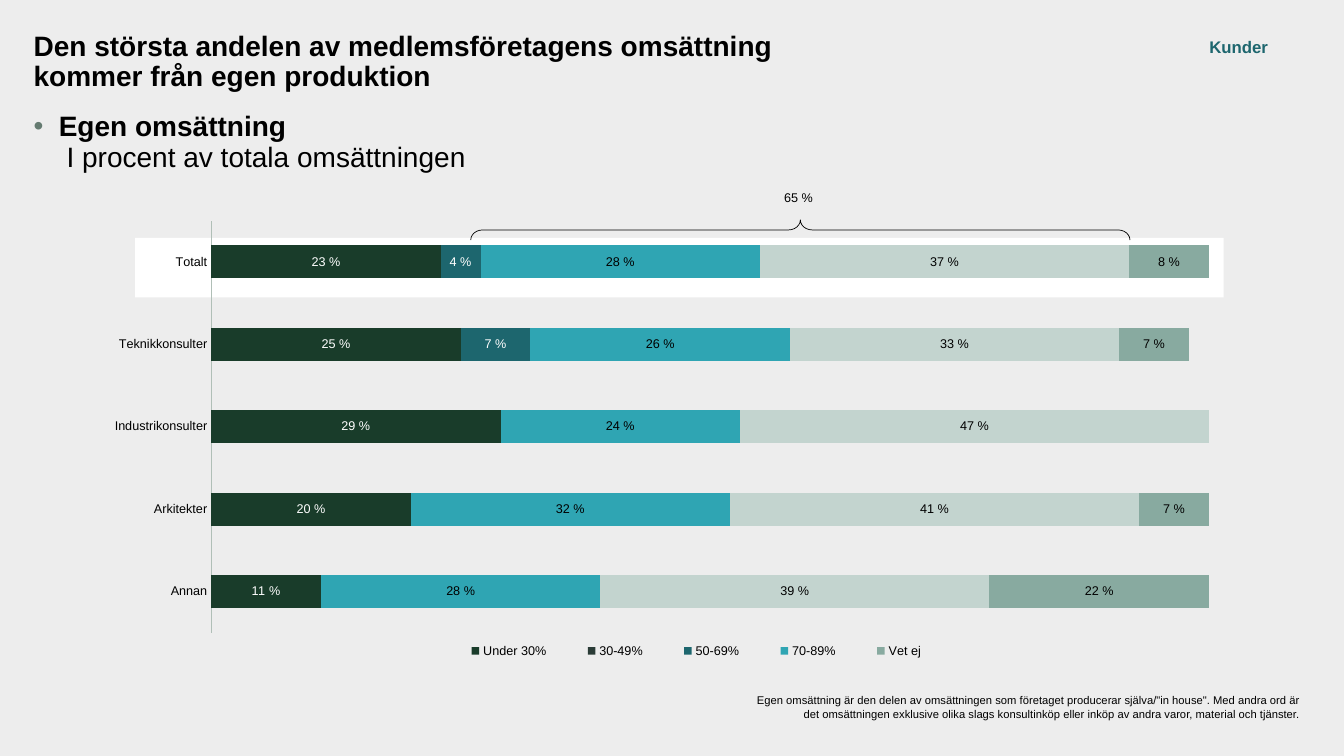
from dataclasses import dataclass
from lxml import etree
from pptx import Presentation
from pptx.chart.data import CategoryChartData
from pptx.dml.color import RGBColor
from pptx.enum.chart import XL_CHART_TYPE as ChartType, XL_LABEL_POSITION as LabelPos
from pptx.enum.chart import XL_LEGEND_POSITION as LegendPos, XL_TICK_MARK as Tick
from pptx.enum.shapes import MSO_SHAPE as Shape
from pptx.enum.text import PP_ALIGN as Align
from pptx.oxml.ns import qn
from pptx.util import Inches, Pt

TITLE = [("Den största andelen av medlemsföretagens omsättning\vkommer från egen produktion", True)]
SUBTITLE = [("Egen omsättning\v", True), (" I procent av totala omsättningen", False)]
TAG = [("Kunder", True)]
SUM_LABEL = [("65 %", False)]
NOTE = [("Egen omsättning är den delen av omsättningen som företaget producerar "
         "själva/\"in house\". Med andra ord är det omsättningen exklusive olika slags "
         "konsultinköp eller inköp av andra varor, material och tjänster.", False)]
COMPANIES = ["Totalt", "Teknikkonsulter", "Industrikonsulter", "Arkitekter", "Annan"]
SHARES = [
    ("Under 30%", (0.23, 0.25, 0.29, 0.20, 0.11), "193C2A", "FFFFFF"),
    ("30-49%", (0, 0, 0, 0, 0), "2A3B36", None),
    ("50-69%", (0.04, 0.07, 0, 0, 0), "1D666E", "FFFFFF"),
    ("70-89%", (0.28, 0.26, 0.24, 0.32, 0.28), "2FA5B3", "000000"),
    ("Mer än 90%", (0.37, 0.33, 0.47, 0.41, 0.39), "C3D4CF", "000000"),
    ("Vet ej", (0.08, 0.07, 0, 0.07, 0.22), "88AAA0", "000000"),
]
HIDDEN_LEGEND_ENTRY = 1

COLS, ROWS = 40, 24
GRID = {
    "title": (1, 1.02, 38.04, 1.8),
    "subtitle": (1, 3.58, 38.04, 2.27),
    "tag": (34.72, 1.02, 4.29, 0.96),
    "highlight": (4.02, 7.55, 32.4, 1.89),
    "chart": (2.76, 6.72, 33.9, 14.53),
    "brace": (14.01, 6.98, 19.62, 0.64),
    "sum": (23.04, 5.86, 1.53, 0.8),
    "note": (21.72, 21.86, 17.28, 1.18),
}
PLOT_AREA = (0.104, 0.02, 0.876, 0.9)
LEGEND_AREA = (0.3, 0.93, 0.46, 0.06)


@dataclass(frozen=True)
class Theme:
    font: str = "Arial"
    ink: str = "000000"
    background: str = "EDEDED"
    panel: str = "FFFFFF"
    accent: str = "1D666E"
    bullet: str = "657B71"
    axis: str = "B0BFB7"
    heading: int = 20
    tag: int = 12
    label: int = 9
    note: int = 8


THEME = Theme()
rgb = RGBColor.from_string


def style(font, size, color=THEME.ink, bold=False):
    font.name, font.size, font.bold = THEME.font, Pt(size), bold
    font.color.rgb = rgb(color)


def place(name):
    x, y, w, h = GRID[name]
    cw, rh = prs.slide_width / COLS, prs.slide_height / ROWS
    return [int(v) for v in (x * cw, y * rh, w * cw, h * rh)]


def add_text(name, runs, size, color=THEME.ink, align=Align.LEFT, inset=True, wrap=True):
    tf = slide.shapes.add_textbox(*place(name)).text_frame
    tf.word_wrap = wrap
    if not inset:
        tf.margin_left = tf.margin_right = tf.margin_top = tf.margin_bottom = 0
    p = tf.paragraphs[0]
    p.text = "".join(text for text, _ in runs) if len(runs) == 1 else ""
    p.alignment = align
    if len(runs) > 1:
        for text, bold in runs:
            r = p.add_run()
            r.text = text.rstrip("\v")
            style(r.font, size, color, bold)
            if text.endswith("\v"):
                p.add_line_break()
    for r in p.runs if len(runs) == 1 else ():
        style(r.font, size, color, runs[0][1])
    return p


def set_bullet(p):
    pPr = p._p.get_or_add_pPr()
    pPr.set("marL", str(Inches(0.25)))
    pPr.set("indent", str(-Inches(0.25)))
    clr = etree.SubElement(pPr, qn("a:buClr"))
    etree.SubElement(clr, qn("a:srgbClr"), val=THEME.bullet)
    etree.SubElement(pPr, qn("a:buFont"), typeface=THEME.font)
    etree.SubElement(pPr, qn("a:buChar"), char="•")


def manual_layout(area, inner=False):
    layout = etree.Element(qn("c:layout"))
    manual = etree.SubElement(layout, qn("c:manualLayout"))
    if inner:
        etree.SubElement(manual, qn("c:layoutTarget"), val="inner")
    for tag in ("xMode", "yMode"):
        etree.SubElement(manual, qn(f"c:{tag}"), val="edge")
    for tag, value in zip("xywh", area):
        etree.SubElement(manual, qn(f"c:{tag}"), val=str(value))
    return layout


def replace_layout(parent, layout, index):
    for old in parent.findall(qn("c:layout")):
        parent.remove(old)
    parent.insert(index, layout)


def add_share_chart():
    data = CategoryChartData(number_format="0%")
    data.categories = COMPANIES
    for name, values, _, _ in SHARES:
        data.add_series(name, values)
    chart = slide.shapes.add_chart(ChartType.BAR_STACKED, *place("chart"), data).chart
    chart.has_title = False
    style(chart.font, THEME.label)
    plot = chart.plots[0]
    plot.gap_width, plot.overlap, plot.vary_by_categories = 150, 100, False
    for series, (_, _, fill, text) in zip(plot.series, SHARES):
        series.format.fill.solid()
        series.format.fill.fore_color.rgb = rgb(fill)
        if text:
            labels = series.data_labels
            labels.show_value = True
            labels.position = LabelPos.CENTER
            labels.number_format, labels.number_format_is_linked = "0\\ %;;", False
            style(labels.font, THEME.label, text)

    cat, val = chart.category_axis, chart.value_axis
    cat.reverse_order = True
    cat.major_tick_mark = cat.minor_tick_mark = Tick.NONE
    cat.format.line.color.rgb, cat.format.line.width = rgb(THEME.axis), Pt(0.75)
    style(cat.tick_labels.font, THEME.label)
    val.minimum_scale, val.maximum_scale = 0, 1
    val.has_major_gridlines = val.visible = False

    chart.has_legend = True
    legend = chart.legend
    legend.position, legend.include_in_layout = LegendPos.BOTTOM, False
    style(legend.font, THEME.label)
    entry = etree.Element(qn("c:legendEntry"))
    etree.SubElement(entry, qn("c:idx"), val=str(HIDDEN_LEGEND_ENTRY))
    etree.SubElement(entry, qn("c:delete"), val="1")
    legend._element.insert(1, entry)
    replace_layout(legend._element, manual_layout(LEGEND_AREA), 2)
    replace_layout(chart._chartSpace.chart.plotArea, manual_layout(PLOT_AREA, True), 0)


prs = Presentation()
prs.slide_width, prs.slide_height = Inches(13.33), Inches(7.5)
slide = prs.slides.add_slide(prs.slide_layouts[6])
slide.background.fill.solid()
slide.background.fill.fore_color.rgb = rgb(THEME.background)

add_text("title", TITLE, THEME.heading, inset=False).line_spacing = 0.9
subtitle = add_text("subtitle", SUBTITLE, THEME.heading, inset=False)
subtitle.line_spacing = 0.9
set_bullet(subtitle)
add_text("tag", TAG, THEME.tag, THEME.accent, Align.CENTER)

highlight = slide.shapes.add_shape(Shape.RECTANGLE, *place("highlight"))
highlight.shadow.inherit = False
highlight.fill.solid()
highlight.fill.fore_color.rgb = rgb(THEME.panel)
highlight.line.fill.background()

add_share_chart()

x, y, span, depth = place("brace")
brace = slide.shapes.add_shape(
    Shape.RIGHT_BRACE, x + (span - depth) // 2, y + (depth - span) // 2, depth, span)
brace.rotation = 270
brace.adjustments[0], brace.adjustments[1] = 0.59, 0.5
brace.shadow.inherit = False
brace.fill.background()
brace.line.color.rgb, brace.line.width = rgb(THEME.ink), Pt(0.5)

add_text("sum", SUM_LABEL, THEME.label, wrap=False)
add_text("note", NOTE, THEME.note, align=Align.RIGHT)
prs.save("out.pptx")
